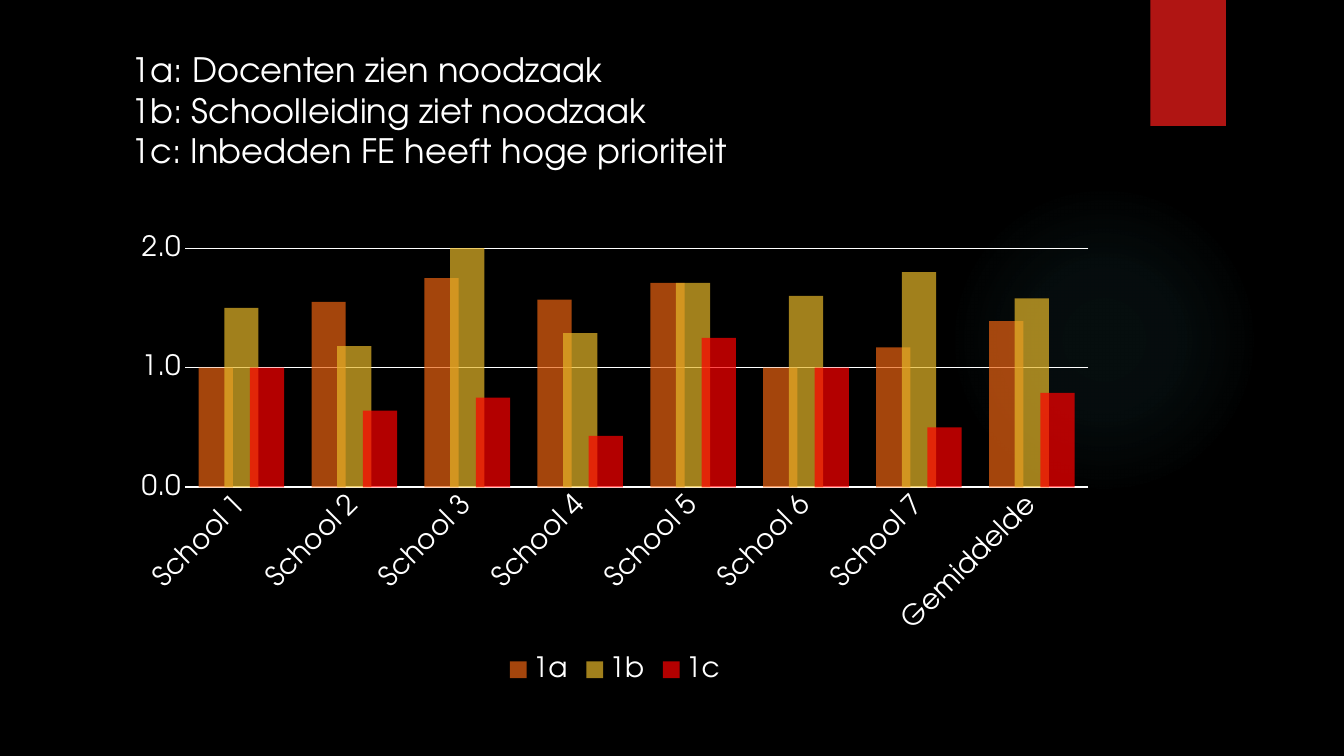
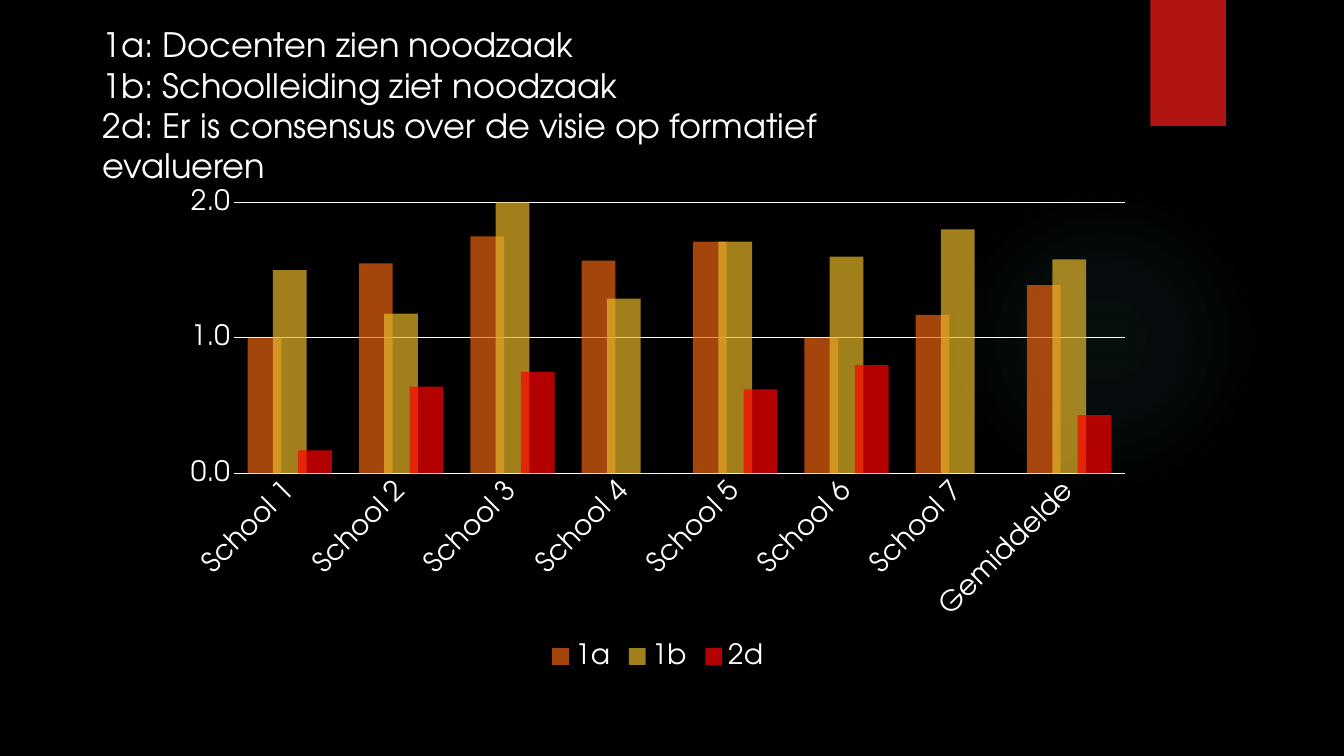
"""Build two chart slides that compare schools on formative evaluation."""
from typing import NamedTuple

from lxml import etree
from pptx import Presentation
from pptx import util as u
from pptx.chart import data
from pptx.dml import color
from pptx.enum import chart as ch, shapes, text
from pptx.oxml import parse_xml
from pptx.oxml.ns import nsdecls, qn

PX = 9144
FONT = "TeX Gyre Adventor"
COLORS = {
    "back": "000000",
    "text": "FFFFFF",
    "ribbon": "B01513",
    "glow": "50B9C1",
    "orange": "EA6312",
    "gold": "E6B729",
    "red": "FF0000",
}
SERIES_COLORS = ("orange", "gold", "red")
SERIES_ALPHA = 70
GLOW_STOPS = ((0, 7), (36, 6), (69, 0))
CATEGORIES = [f"School {number}" for number in range(1, 8)] + ["Gemiddelde"]


class Area(NamedTuple):
    left: int
    top: int
    width: int
    height: int

    def emu(self) -> list[u.Emu]:
        return [u.Emu(length * PX) for length in self]


class Series(NamedTuple):
    name: str
    label: str
    values: tuple[float, ...]


class ChartSlide(NamedTuple):
    title_area: Area
    chart_area: Area
    series: tuple[Series, ...]


GLOW = Area(941, 183, 308, 308)
RIBBON = Area(1141, 0, 75, 125)
TEACHERS = Series("1a", "Docenten zien noodzaak",
                  (1, 1.55, 1.75, 1.57, 1.71, 1, 1.17, 1.39))
LEADERS = Series("1b", "Schoolleiding ziet noodzaak",
                 (1.5, 1.18, 2, 1.29, 1.71, 1.6, 1.8, 1.58))
PRIORITY = Series("1c", "Inbedden FE heeft hoge prioriteit",
                  (1, 0.64, 0.75, 0.43, 1.25, 1, 0.5, 0.79))
CONSENSUS = Series("2d", "Er is consensus over de visie op formatief evalueren",
                   (0.17, 0.64, 0.75, 0, 0.62, 0.8, 0, 0.43))
SLIDES = (
    ChartSlide(Area(121, 44, 616, 131), Area(121, 224, 978, 459),
               (TEACHERS, LEADERS, PRIORITY)),
    ChartSlide(Area(92, 19, 777, 131), Area(170, 178, 965, 492),
               (TEACHERS, LEADERS, CONSENSUS)),
)


def rgb(name: str) -> color.RGBColor:
    return color.RGBColor.from_string(COLORS[name])


def style_font(font, size: int) -> None:
    font.name = FONT
    font.size = u.Pt(size)
    font.color.rgb = rgb("text")


def style_line(line, width: float) -> None:
    line.color.rgb = rgb("text")
    line.width = u.Pt(width)


def add_solid(page, kind, area: Area, fill: str):
    shape = page.shapes.add_shape(kind, *area.emu())
    shape.shadow.inherit = False
    shape.line.fill.background()
    shape.fill.solid()
    shape.fill.fore_color.rgb = rgb(fill)
    return shape


def add_decoration(page) -> None:
    glow = add_solid(page, shapes.MSO_SHAPE.OVAL, GLOW, "glow")
    stops = "".join(
        f'<a:gs pos="{place * 1000}"><a:srgbClr val="{COLORS["glow"]}">'
        f'<a:alpha val="{alpha * 1000}"/></a:srgbClr></a:gs>'
        for place, alpha in GLOW_STOPS
    )
    gradient = parse_xml(
        f'<a:gradFill {nsdecls("a")} rotWithShape="1"><a:gsLst>{stops}</a:gsLst>'
        '<a:path path="circle"><a:fillToRect l="50000" t="50000" r="50000" b="50000"/>'
        "</a:path></a:gradFill>"
    )
    solid = glow.element.spPr.find(qn("a:solidFill"))
    solid.getparent().replace(solid, gradient)
    add_solid(page, shapes.MSO_SHAPE.RECTANGLE, RIBBON, "ribbon")


def add_title(page, area: Area, series: tuple[Series, ...]) -> None:
    box = page.shapes.add_textbox(*area.emu())
    frame = box.text_frame
    frame.word_wrap = True
    frame.auto_size = text.MSO_AUTO_SIZE.SHAPE_TO_FIT_TEXT
    para = frame.paragraphs[0]
    for index, item in enumerate(series):
        if index:
            para.add_line_break()
        span = para.add_run()
        span.text = f"{item.name}: {item.label}"
        style_font(span.font, 24)


def style_axes(chart) -> None:
    schools, scores = chart.category_axis, chart.value_axis
    for axis in (schools, scores):
        axis.major_tick_mark = ch.XL_TICK_MARK.NONE
        axis.minor_tick_mark = ch.XL_TICK_MARK.NONE
        style_font(axis.tick_labels.font, 20)
    style_line(schools.format.line, 1.25)
    schools._element.find(f'{qn("c:txPr")}/{qn("a:bodyPr")}').set("rot", "-2700000")
    scores.minimum_scale, scores.maximum_scale = 0, 2
    scores.major_unit = 1
    scores.tick_labels.number_format = "0.0"
    scores.tick_labels.number_format_is_linked = False
    scores.format.line.fill.background()
    scores.has_major_gridlines = True
    style_line(scores.major_gridlines.format.line, 0.75)


def add_column_chart(page, area: Area, series: tuple[Series, ...]) -> None:
    chart_data = data.CategoryChartData(number_format="0.0")
    chart_data.categories = CATEGORIES
    for item in series:
        chart_data.add_series(item.name, item.values)
    chart = page.shapes.add_chart(
        ch.XL_CHART_TYPE.COLUMN_CLUSTERED, *area.emu(), chart_data
    ).chart
    style_font(chart.font, 10)
    chart.has_title = False
    chart.has_legend = True
    chart.legend.position = ch.XL_LEGEND_POSITION.BOTTOM
    chart.legend.include_in_layout = False
    style_font(chart.legend.font, 20)
    style_axes(chart)
    plot = chart.plots[0]
    plot.vary_by_categories = False
    plot.gap_width, plot.overlap = 80, 25
    for columns, name in zip(plot.series, SERIES_COLORS):
        fill = columns.format.fill
        fill.solid()
        fill.fore_color.rgb = rgb(name)
        tint = columns._element.find(f'.//{qn("a:srgbClr")}')
        etree.SubElement(tint, qn("a:alpha"), val=str(SERIES_ALPHA * 1000))


def main() -> None:
    deck = Presentation()
    deck.slide_width, deck.slide_height = u.Emu(1333 * PX), u.Emu(750 * PX)
    backdrop = deck.slide_master.background.fill
    backdrop.solid()
    backdrop.fore_color.rgb = rgb("back")
    for content in SLIDES:
        page = deck.slides.add_slide(deck.slide_layouts[6])
        add_decoration(page)
        add_title(page, content.title_area, content.series)
        add_column_chart(page, content.chart_area, content.series)
    deck.save("out.pptx")


if __name__ == "__main__":
    main()
